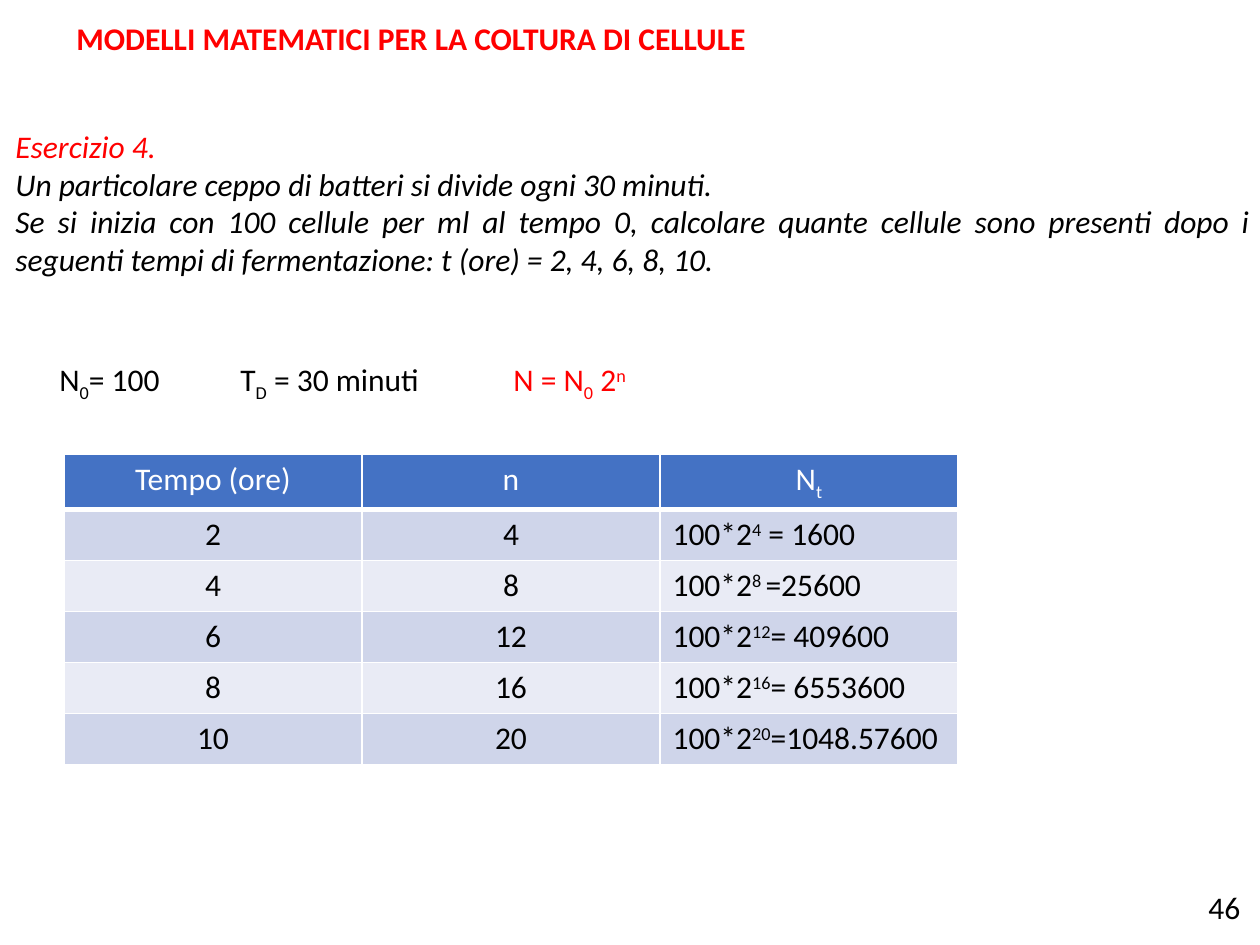
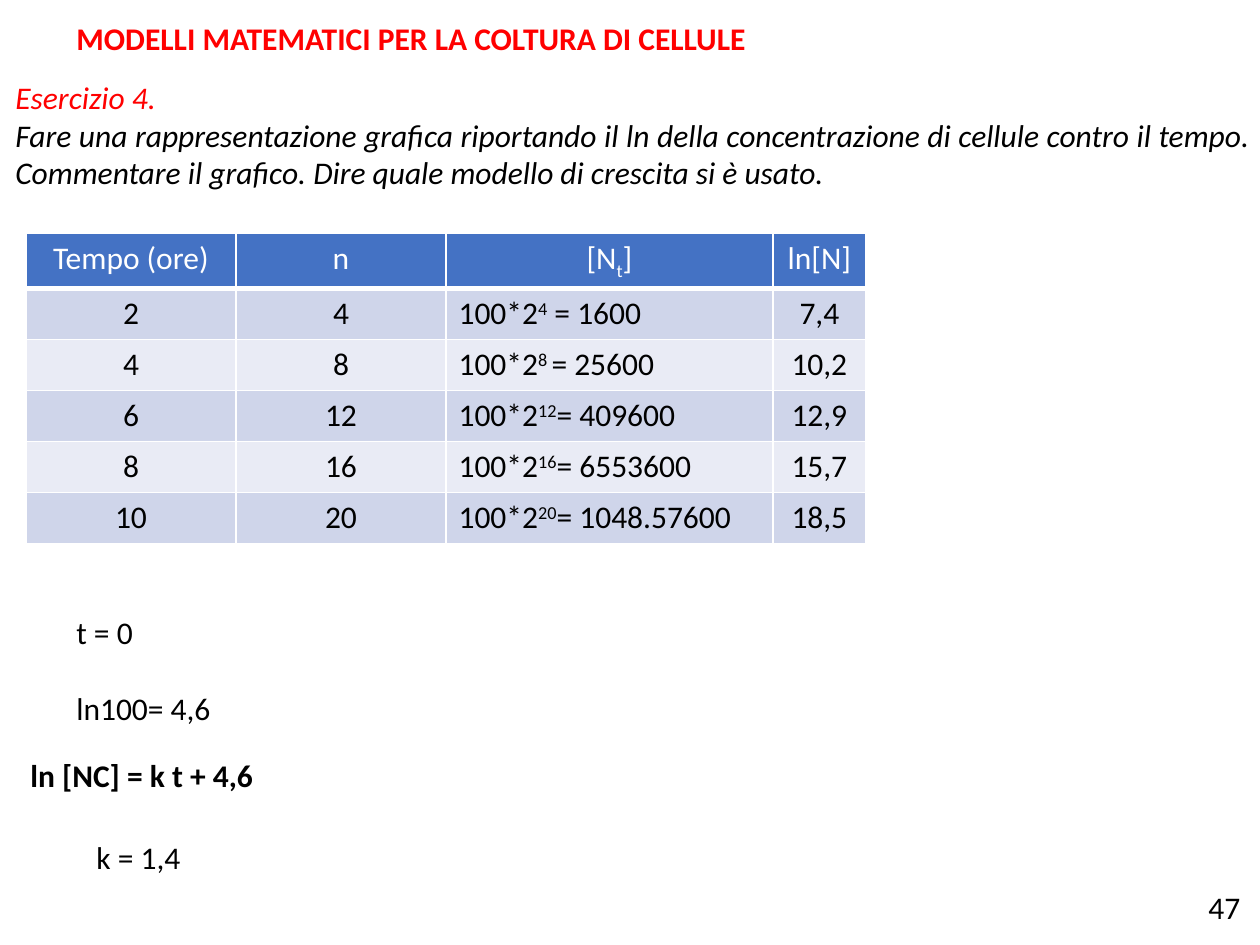
from lxml.etree import SubElement
from pptx import Presentation
from pptx.dml.color import RGBColor
from pptx.enum.text import MSO_ANCHOR, MSO_AUTO_SIZE, PP_ALIGN
from pptx.oxml.ns import qn
from pptx.util import Emu, Pt

COLORS = {
    "accent": "FF0000",
    "ink": "000000",
    "white": "FFFFFF",
    "header": "4472C4",
    "odd_row": "CFD5EA",
    "even_row": "E9EBF5",
}
FONT = "Calibri"
TEXT_SIZE = 18
BLANK_LINE = 22
ROW_HEIGHT = 51
LINE_HEIGHT = 50
BASELINES = {"_": "-25000", "^": "30000"}
HEADER_BORDERS = {"a:lnL": 1, "a:lnR": 1, "a:lnT": 1, "a:lnB": 3}
HOURS = (2, 4, 6, 8, 10)
LOGARITHMS = ("7,4", "10,2", "12,9", "15,7", "18,5")


def px(length):
    return Emu(round(length * 914400 / 126))


def rgb(name):
    return RGBColor.from_string(COLORS[name])


def write(para, text, color="ink", bold=False, italic=False, align=PP_ALIGN.LEFT, before=0):
    """Parts are split by |, and a part led by _ or ^ is lowered or raised."""
    para.alignment = align
    para.space_before = Pt(before)
    for part in text.split("|"):
        baseline = BASELINES.get(part[0])
        span = para.add_run()
        span.text = part[1:] if baseline else part
        span.font.name = FONT
        span.font.size = Pt(TEXT_SIZE)
        span.font.bold = bold
        span.font.italic = italic
        span.font.color.rgb = rgb(color)
        if baseline:
            span.font._element.set("baseline", baseline)


def add_text(page, box, lines, wrap=True, anchor=MSO_ANCHOR.TOP):
    frame = page.shapes.add_textbox(*map(px, box)).text_frame
    frame.word_wrap = wrap
    frame.auto_size = MSO_AUTO_SIZE.SHAPE_TO_FIT_TEXT
    frame.vertical_anchor = anchor
    for index, (text, style) in enumerate(lines):
        para = frame.add_paragraph() if index else frame.paragraphs[0]
        write(para, text, **style)


def add_page(deck, number):
    page = deck.slides.add_slide(deck.slide_layouts[6])
    title = "MODELLI MATEMATICI PER LA COLTURA DI CELLULE"
    add_text(page, (64, 13, 702, LINE_HEIGHT), [(title, {"color": "accent", "bold": True})], wrap=False)
    add_text(page, (1196, 882, 58, LINE_HEIGHT), [(str(number), {})], wrap=False)
    return page


def add_exercise(page, box, sentences):
    style = {"italic": True, "align": PP_ALIGN.JUSTIFY}
    lines = [("Esercizio 4.", {**style, "color": "accent"})]
    lines += [(sentence, style) for sentence in sentences]
    add_text(page, box, lines, anchor=MSO_ANCHOR.MIDDLE)


def add_header_borders(cell):
    properties = cell._tc.get_or_add_tcPr()
    for index, (side, width) in enumerate(HEADER_BORDERS.items()):
        line = SubElement(properties, qn(side), w=str(Pt(width)))
        fill = SubElement(line, qn("a:solidFill"))
        SubElement(fill, qn("a:srgbClr"), val=COLORS["white"])
        properties.remove(line)
        properties.insert(index, line)


def add_growth_table(page, left, top, widths, headings, counts, *extra_columns):
    columns = [
        [str(hour) for hour in HOURS],
        [str(2 * hour) for hour in HOURS],
        [f"100*2|^{count}" for count in counts],
        *extra_columns,
    ]
    rows = [headings, *zip(*columns)]
    box = (left, top, sum(widths), ROW_HEIGHT * len(rows))
    table = page.shapes.add_table(len(rows), len(widths), *map(px, box)).table
    for column, width in zip(table.columns, widths):
        column.width = px(width)
    for row_index, row in enumerate(rows):
        is_header = row_index == 0
        band = "header" if is_header else "odd_row" if row_index % 2 else "even_row"
        for column_index, text in enumerate(row):
            cell = table.cell(row_index, column_index)
            cell.fill.solid()
            cell.fill.fore_color.rgb = rgb(band)
            is_count = column_index == 2 and not is_header
            write(
                cell.text_frame.paragraphs[0],
                text,
                color="white" if is_header else "ink",
                align=PP_ALIGN.LEFT if is_count else PP_ALIGN.CENTER,
            )
            if is_header:
                add_header_borders(cell)


def add_given_data(page, left, top):
    add_text(page, (left, top, 136, 77), [("N|_0|= 100", {})], wrap=False)
    add_text(page, (left + 181, top, 638, LINE_HEIGHT), [("T|_D| = 30 minuti", {})])
    add_text(page, (left + 454, top, 630, LINE_HEIGHT), [("N = N|_0| 2|^n", {"color": "accent"})])


def add_growth_law(page, left, top):
    start = [("t = 0", {}), ("ln100= 4,6", {"before": BLANK_LINE})]
    add_text(page, (left + 46, top, 161, 127), start, wrap=False)
    add_text(page, (left, top + 143, 638, LINE_HEIGHT), [("ln [NC] = k t + 4,6", {"bold": True})])
    add_text(page, (left + 66, top + 225, 120, LINE_HEIGHT), [("k = 1,4", {})], wrap=False)


def build_count_page(deck):
    page = add_page(deck, 46)
    add_exercise(page, (3, 120, 1260, 165), [
        "Un particolare ceppo di batteri si divide ogni 30 minuti.",
        "Se si inizia con 100 cellule per ml al tempo 0, calcolare quante cellule sono presenti "
        "dopo i seguenti tempi di fermentazione: t (ore) = 2, 4, 6, 8, 10.",
    ])
    add_given_data(page, 47, 354)
    counts = ("4| = 1600", "8 |=25600", "12|= 409600", "16|= 6553600", "20|=1048.57600")
    add_growth_table(page, 64, 454, (298, 298, 298), ("Tempo (ore)", "n", "N|_t"), counts)


def build_logarithm_page(deck):
    page = add_page(deck, 47)
    add_exercise(page, (3, 71, 1260, 127), [
        "Fare una rappresentazione grafica riportando il ln della concentrazione di cellule "
        "contro il tempo. Commentare il grafico. Dire quale modello di crescita si è usato.",
    ])
    headings = ("Tempo (ore)", "n", "[N|_t|]", "ln[N]")
    counts = ("4| = 1600", "8 |= 25600", "12|= 409600", "16|= 6553600", "20|= 1048.57600")
    add_growth_table(page, 26, 233, (210, 210, 327, 93), headings, counts, LOGARITHMS)
    add_growth_law(page, 18, 607)


def main():
    deck = Presentation()
    deck.slide_width, deck.slide_height = px(1260), px(945)
    build_count_page(deck)
    build_logarithm_page(deck)
    deck.save("out.pptx")


if __name__ == "__main__":
    main()
